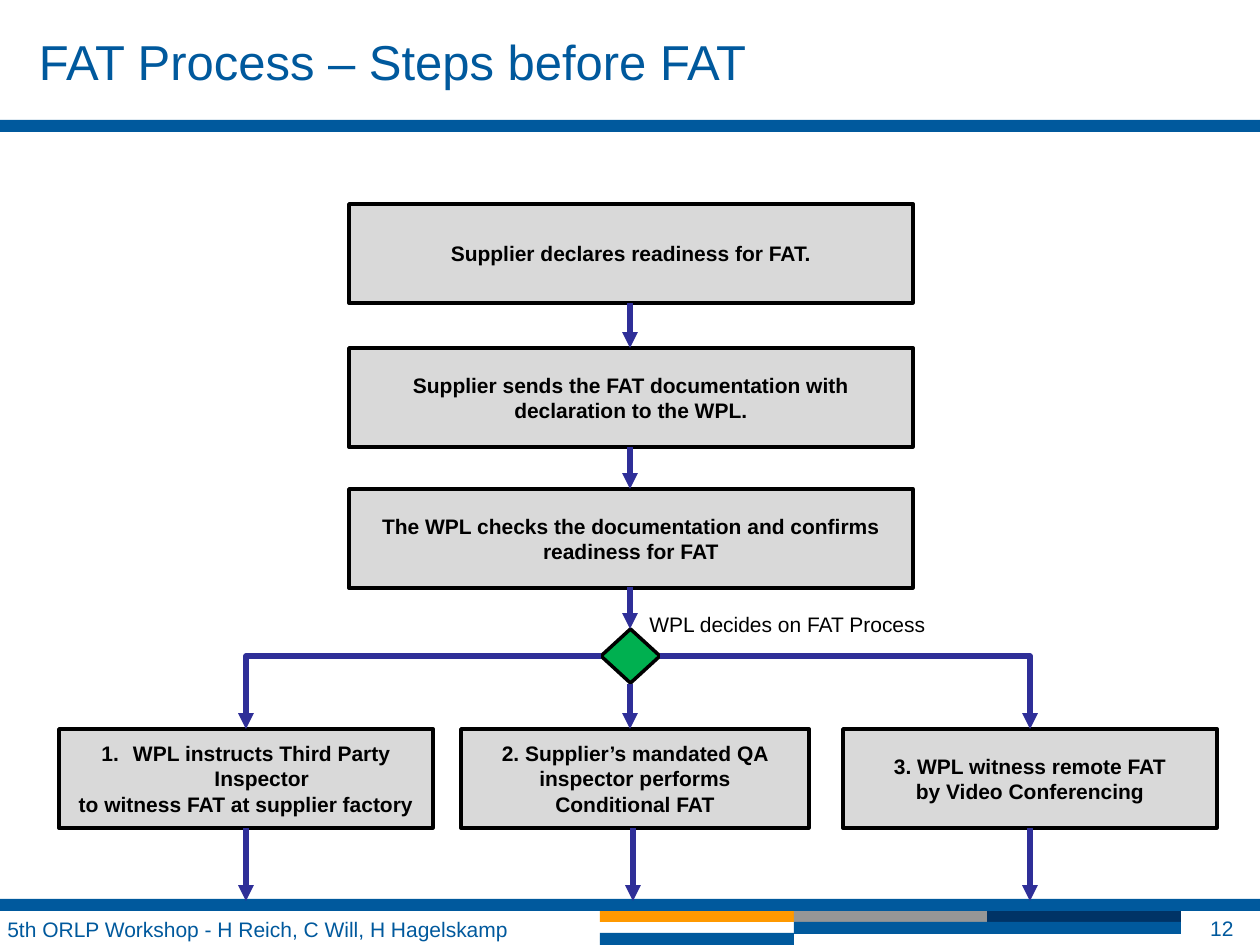
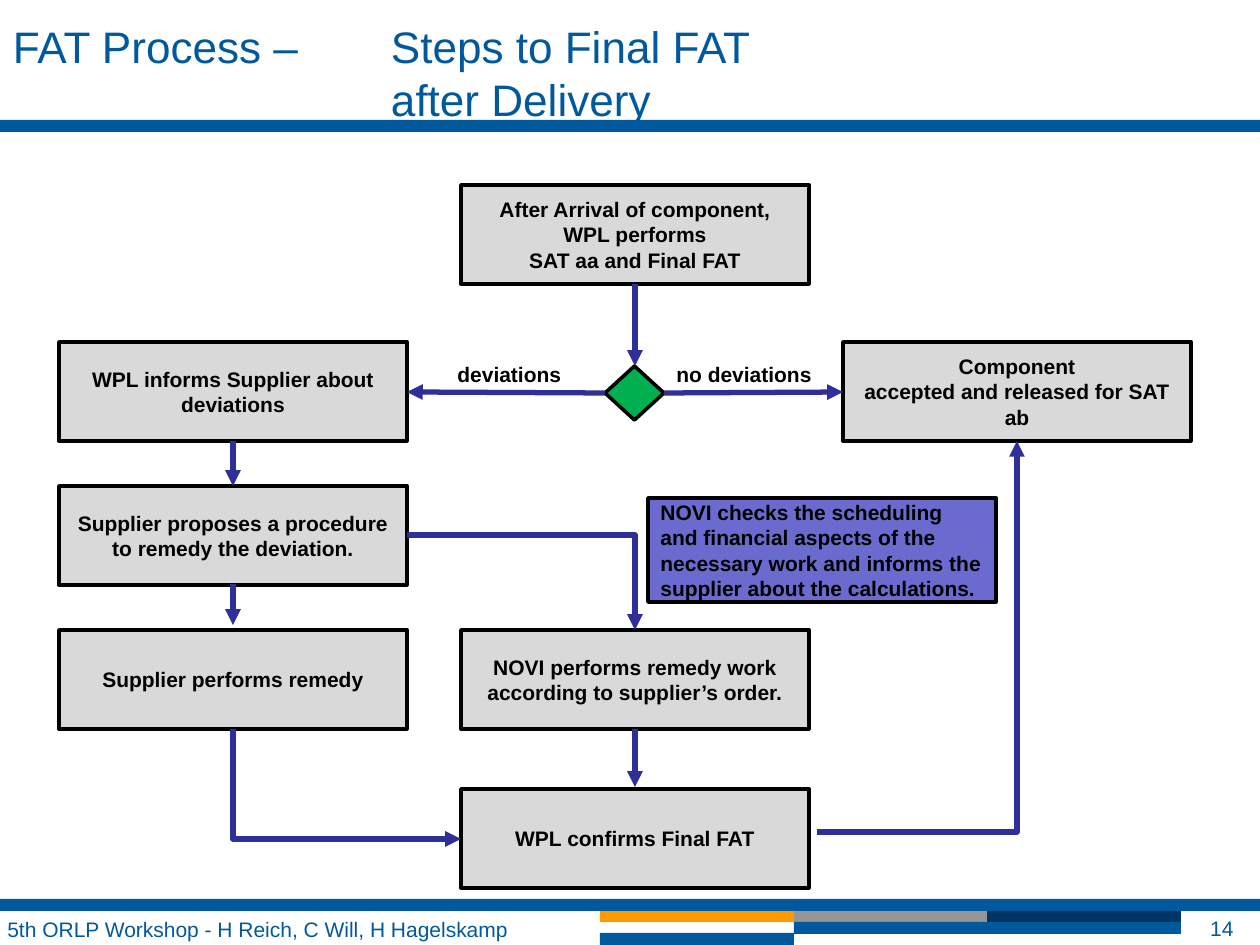
"""Build two flowchart slides on factory acceptance testing (FAT)."""
from dataclasses import dataclass

from lxml import etree
from pptx import Presentation
from pptx import util as u
from pptx.dml.color import RGBColor
from pptx.enum import shapes, text
from pptx.oxml.ns import qn

SCALE = 914400 / 126


@dataclass(frozen=True)
class Theme:
    font: str = "Arial"
    brand: str = "00599D"
    orange: str = "FF9900"
    gray: str = "969696"
    navy: str = "003366"
    ink: str = "000000"
    step: str = "D9D9D9"
    note: str = "6B6BCF"
    decision: str = "00B050"
    arrow: str = "2F2F98"
    body_size: float = 12
    box_line: float = 2
    arrow_line: float = 3


theme = Theme()
LEFT, CENTER, RIGHT = text.PP_ALIGN.LEFT, text.PP_ALIGN.CENTER, text.PP_ALIGN.RIGHT
TOP, MIDDLE = text.MSO_ANCHOR.TOP, text.MSO_ANCHOR.MIDDLE
RECTANGLE, DIAMOND = shapes.MSO_SHAPE.RECTANGLE, shapes.MSO_SHAPE.DIAMOND


def px(*lengths):
    return [u.Emu(round(length * SCALE)) for length in lengths]


def write(shape, content, align=LEFT, anchor=TOP, bold=False, color=theme.ink, size=theme.body_size):
    frame = shape.text_frame
    frame.text = content
    frame.word_wrap = True
    frame.auto_size = text.MSO_AUTO_SIZE.NONE
    frame.vertical_anchor = anchor
    for paragraph in frame.paragraphs:
        paragraph.alignment = align
        paragraph.font.name = theme.font
        paragraph.font.size = u.Pt(size)
        paragraph.font.bold = bold
        paragraph.font.color.rgb = RGBColor.from_string(color)
    return frame


BANDS = [
    (600, 910, 194, theme.orange),
    (794, 910, 193, theme.gray),
    (987, 910, 194, theme.navy),
    (0, 899, 1260, theme.brand),
    (794, 922, 387, theme.brand),
    (600, 933, 194, theme.brand),
    (0, 120, 1260, theme.brand),
]
FOOTER = "5th ORLP Workshop - H Reich, C Will, H Hagelskamp"
BOX_HEIGHT = 99
WIDE, MEDIUM, NARROW = 564, 374, 348
LEFT_X, MIDDLE_X, RIGHT_X = 59, 461, 843

SLIDES = [
    {
        "title": ("FAT Process – Steps before FAT", (39, 27, 1186, 68), 28, MIDDLE),
        "number": "12",
        "boxes": [
            (349, 204, WIDE, "Supplier declares readiness for FAT."),
            (349, 348, WIDE, "Supplier sends the FAT documentation with\ndeclaration to the WPL."),
            (349, 489, WIDE, "The WPL checks the documentation and confirms readiness for FAT"),
            (LEFT_X, 729, MEDIUM, "WPL instructs Third Party Inspector\nto witness FAT at supplier factory"),
            (MIDDLE_X, 729, NARROW, "2. Supplier’s mandated QA inspector performs\nConditional FAT"),
            (RIGHT_X, 729, MEDIUM, "3. WPL witness remote FAT\nby Video Conferencing"),
        ],
        "numbered": 3,
        "diamond": (601, 629),
        "labels": [(593, 605, 389, "WPL decides on FAT Process", CENTER, False)],
        "arrows": [
            (630, 303, 630, 348),
            (630, 447, 630, 489),
            (630, 587, 630, 629),
            (630, 684, 630, 729),
            (660, 656, 1030, 729),
            (601, 656, 246, 729),
            (246, 828, 246, 901),
            (633, 828, 633, 901),
            (1030, 828, 1030, 901),
        ],
        "reversed": [],
    },
    {
        "title": ("FAT Process – \tSteps to Final FAT\v\tafter Delivery", (13, 19, 1186, 68), 25.2, TOP),
        "number": "14",
        "boxes": [
            (MIDDLE_X, 185, NARROW, "After Arrival of component,\nWPL performs\nSAT aa and Final FAT"),
            (RIGHT_X, 342, NARROW, "Component\naccepted and released for SAT ab"),
            (LEFT_X, 342, NARROW, "WPL informs Supplier about deviations"),
            (LEFT_X, 486, NARROW, "Supplier proposes a procedure to remedy the deviation."),
            (LEFT_X, 630, NARROW, "Supplier performs remedy"),
            (MIDDLE_X, 630, NARROW, "NOVI performs remedy work according to supplier’s order."),
            (MIDDLE_X, 789, NARROW, "WPL confirms Final FAT"),
        ],
        "numbered": None,
        "diamond": (605, 366),
        "labels": [
            (445, 355, 155, "deviations", LEFT, True),
            (664, 355, 169, "no deviations", LEFT, True),
        ],
        "note": "NOVI checks the scheduling and financial aspects of the necessary work "
                "and informs the supplier about the calculations.",
        "arrows": [
            (635, 284, 635, 366),
            (605, 393, 407, 392),
            (664, 393, 843, 392),
            (233, 441, 233, 486),
            (233, 584, 233, 625),
            (407, 535, 635, 630),
            (635, 729, 635, 787),
            (817, 832, 1017, 441),
        ],
        "reversed": [(461, 839, 233, 729)],
    },
]

presentation = Presentation()
presentation.slide_width, presentation.slide_height = px(1260, 945)

for page in SLIDES:
    slide = presentation.slides.add_slide(presentation.slide_layouts[5])

    for x, y, width, color in BANDS:
        band = slide.shapes.add_shape(RECTANGLE, *px(x, y, width, 12))
        band.shadow.inherit = False
        band.fill.solid()
        band.fill.fore_color.rgb = RGBColor.from_string(color)
        band.line.fill.background()

    content, place, size, anchor = page["title"]
    title = slide.shapes.title
    title.left, title.top, title.width, title.height = px(*place)
    frame = write(title, content, anchor=anchor, color=theme.brand, size=size)
    frame.margin_left = frame.margin_right = frame.margin_top = frame.margin_bottom = 0
    if "\t" in content:
        tabs = etree.Element(qn("a:tabLst"))
        etree.SubElement(tabs, qn("a:tab"), pos=str(u.Inches(3)), algn="l")
        title.element.find(".//" + qn("a:pPr")).insert(0, tabs)

    blocks = [(RECTANGLE, x, y, width, BOX_HEIGHT, theme.step, content, CENTER)
              for x, y, width, content in page["boxes"]]
    blocks.append((DIAMOND, *page["diamond"], 59, 54, theme.decision, "", CENTER))
    if "note" in page:
        blocks.append((RECTANGLE, 648, 498, NARROW, 104, theme.note, page["note"], LEFT))
    for index, (kind, x, y, width, height, color, content, align) in enumerate(blocks):
        block = slide.shapes.add_shape(kind, *px(x, y, width, height))
        block.shadow.inherit = False
        block.fill.solid()
        block.fill.fore_color.rgb = RGBColor.from_string(color)
        block.line.color.rgb = RGBColor.from_string(theme.ink)
        block.line.width = u.Pt(theme.box_line)
        write(block, content, align, MIDDLE, bold=True)
        if index == page["numbered"]:
            properties = block.element.find(".//" + qn("a:pPr"))
            properties.set("marL", str(u.Inches(0.25)))
            properties.set("indent", str(u.Inches(-0.25)))
            properties.insert(0, etree.Element(qn("a:buAutoNum"), type="arabicPeriod"))

    routes = [(route, "a:tailEnd") for route in page["arrows"]]
    routes += [(route, "a:headEnd") for route in page["reversed"]]
    for route, arrow_end in routes:
        x1, y1, x2, y2 = route
        bent = min(abs(x2 - x1), abs(y2 - y1)) > 1
        kind = shapes.MSO_CONNECTOR.ELBOW if bent else shapes.MSO_CONNECTOR.STRAIGHT
        arrow = slide.shapes.add_connector(kind, *px(*route))
        arrow.line.color.rgb = RGBColor.from_string(theme.arrow)
        arrow.line.width = u.Pt(theme.arrow_line)
        properties = arrow.element.spPr
        if bent:
            properties.find(qn("a:prstGeom")).set("prst", "bentConnector2")
        etree.SubElement(properties.find(qn("a:ln")), qn(arrow_end), type="triangle")
        etree.SubElement(properties, qn("a:effectLst"))

    for x, y, width, content, align, bold in page["labels"]:
        label = slide.shapes.add_textbox(*px(x, y, width, 38))
        write(label, content, align, bold=bold)

    footer = slide.shapes.add_textbox(*px(-5, 910, 605, 34))
    write(footer, FOOTER, color=theme.brand)
    number = slide.shapes.add_textbox(*px(1145, 911, 101, 34))
    frame = write(number, page["number"], RIGHT, MIDDLE, color=theme.brand)
    frame.margin_top = frame.margin_bottom = 0

presentation.save("out.pptx")
